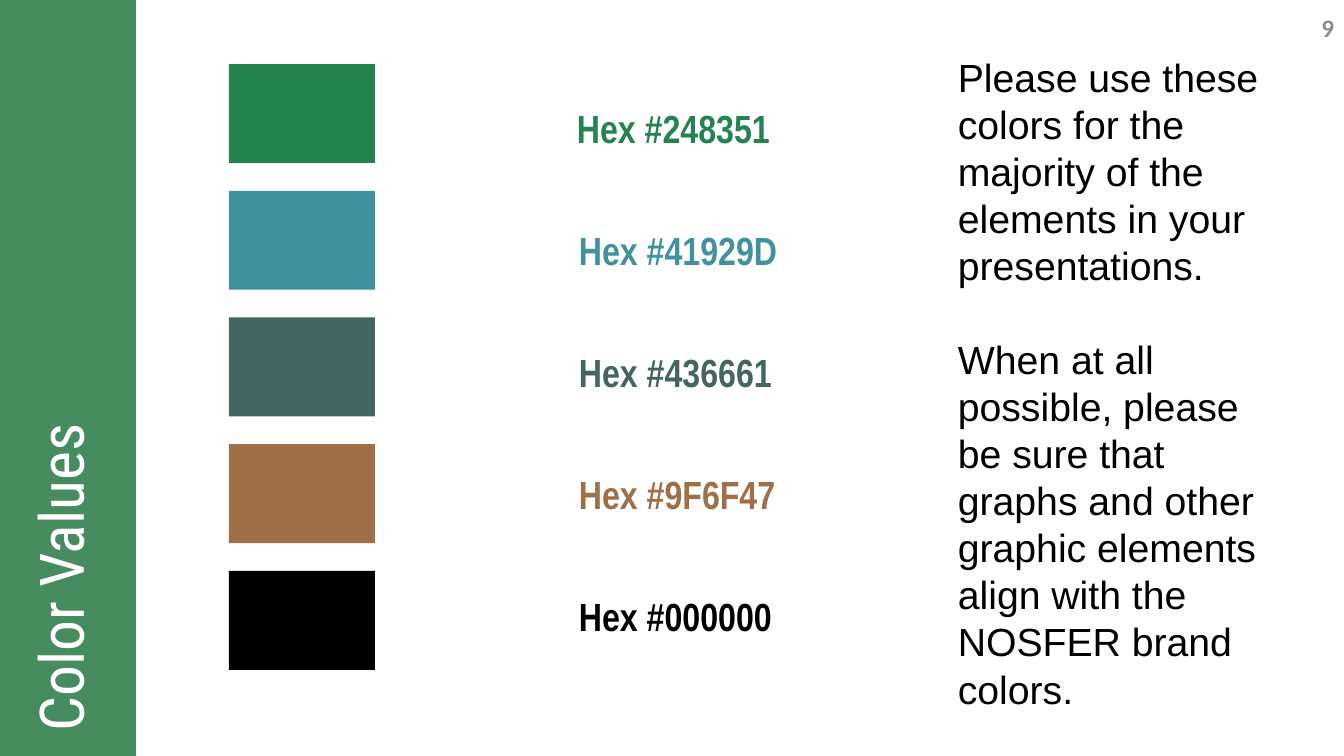
from pptx import Presentation
from pptx.dml.color import RGBColor
from pptx.enum.shapes import MSO_SHAPE
from pptx.enum.text import MSO_ANCHOR, PP_ALIGN
from pptx.util import Emu, Pt

RECT = MSO_SHAPE.RECTANGLE
TOP, MIDDLE = MSO_ANCHOR.TOP, MSO_ANCHOR.MIDDLE
LEFT, RIGHT = PP_ALIGN.LEFT, PP_ALIGN.RIGHT

# Content
TITLE = "Color Values"
PAGE_NUMBER = "9"
SWATCHES = ["248351", "41929D", "436661", "9F6F47", "000000"]
GUIDANCE = [
    "Please use these colors for the majority of the elements in your presentations.",
    "When at all possible, please be sure that graphs and other graphic elements "
    "align with the NOSFER brand colors.",
]
COLORS = {"bar": "468C5F", "title": "FFFFFF", "number": "8C8C8C", "text": "000000"}

# Layout in px
SLIDE_W, SLIDE_H = 1344, 756
BAR_W = 136
SWATCH_X, SWATCH_Y, SWATCH_W, SWATCH_H = 229, 64, 146, 99
SWATCH_SPAN = 507  # from the first swatch top to the last
LABEL_XS = [567, 569, 569, 569, 569]
LABEL_Y, LABEL_STEP, LABEL_W, LABEL_H = 105, 122, 684, 58
TITLE_CENTER_X, TITLE_W, TITLE_H = 64, 726, 146


def px(n):
    return Emu(round(n * 914400 / 100.8))


def add_rect(s, x, y, w, h, color):
    sp = s.shapes.add_shape(RECT, px(x), px(y), px(w), px(h))
    sp.shadow.inherit = False
    sp.fill.solid()
    sp.fill.fore_color.rgb = RGBColor.from_string(color)
    sp.line.fill.background()
    return sp


def add_text(s, x, y, w, h, lines, font, size, color, bold=False,
             align=LEFT, anchor=TOP, spacing=None, before=0, gap=0):
    sp = s.shapes.add_textbox(px(x), px(y), px(w), px(h))
    tf = sp.text_frame
    tf.word_wrap = True
    tf.vertical_anchor = anchor
    for i, line in enumerate(lines):
        p = tf.add_paragraph() if i else tf.paragraphs[0]
        p.text = line
        p.alignment = align
        p.line_spacing = spacing
        p.space_before = Pt(gap if i else before)
        p.font.name, p.font.size, p.font.bold = font, Pt(size), bold
        p.font.color.rgb = RGBColor.from_string(color)
    return sp


prs = Presentation()
prs.slide_width, prs.slide_height = px(SLIDE_W), px(SLIDE_H)
s = prs.slides.add_slide(prs.slide_layouts[6])

# Page number
add_text(s, 1276, 0, 68, 55, [PAGE_NUMBER], "Calibri", 18, COLORS["number"],
         bold=True, align=RIGHT, anchor=MIDDLE)

# Side bar and title, both turned to read upwards
bar = add_rect(s, (BAR_W - SLIDE_H) / 2, (SLIDE_H - BAR_W) / 2, SLIDE_H, BAR_W, COLORS["bar"])
title = add_text(s, TITLE_CENTER_X - TITLE_W / 2, (SLIDE_H - TITLE_H) / 2, TITLE_W, TITLE_H,
                 [TITLE], "Roboto Condensed", 44, COLORS["title"], anchor=MIDDLE, spacing=0.9)
bar.rotation = title.rotation = 270

# Swatches and their hex values
swatch_step = SWATCH_SPAN / (len(SWATCHES) - 1)
for i, (color, label_x) in enumerate(zip(SWATCHES, LABEL_XS)):
    add_rect(s, SWATCH_X, SWATCH_Y + i * swatch_step, SWATCH_W, SWATCH_H, color)
    add_text(s, label_x, LABEL_Y + i * LABEL_STEP, LABEL_W, LABEL_H, [f"Hex #{color}"],
             "Arial Narrow", 28, color, bold=True, spacing=0.9, before=10)

# Guidance
add_text(s, 948, 48, 334, 675, GUIDANCE, "Arial", 28, COLORS["text"], gap=33.6)

prs.save("out.pptx")
